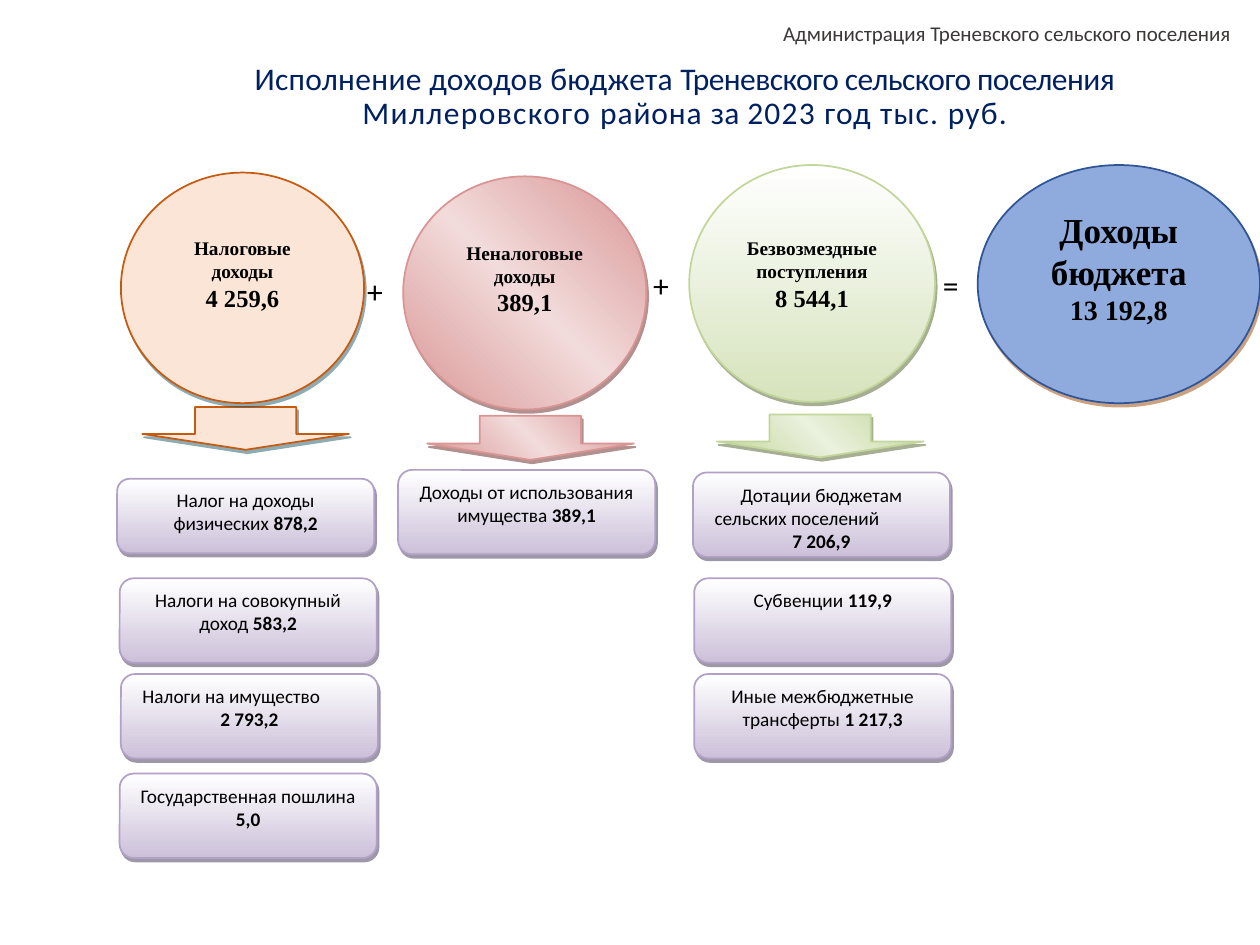
import copy
import pptx
import pptx.util
import pptx.dml.color
import pptx.enum.shapes
import pptx.enum.text
import pptx.oxml
import pptx.oxml.ns

Pt = pptx.util.Pt
rgb = pptx.dml.color.RGBColor.from_string
qn = pptx.oxml.ns.qn
MSO = pptx.enum.shapes.MSO_SHAPE
ALIGN = pptx.enum.text.PP_ALIGN
ANCHOR = pptx.enum.text.MSO_ANCHOR

prs = pptx.Presentation()
prs.slide_width = pptx.util.Inches(10)
prs.slide_height = pptx.util.Inches(7.5)
s = prs.slides.add_slide(prs.slide_layouts[6])
COL = prs.slide_width / 100
ROW = prs.slide_height / 75


def add(kind, x, y, w, h, colors=None, angle=0, line=None, shadow=None):
    place = [int(x * COL), int(y * ROW), int(w * COL), int(h * ROW)]
    if kind is None:
        sp = s.shapes.add_textbox(*place)
    else:
        sp = s.shapes.add_shape(kind, *place)
        sp.shadow.inherit = False
        if len(colors) == 1:
            sp.fill.solid()
            sp.fill.fore_color.rgb = rgb(colors[0])
        else:
            sp.fill.gradient()
            sp.fill.gradient_angle = angle
            stops = sp._element.spPr.find(".//" + qn("a:gsLst"))
            while len(stops) < len(colors):
                stops.append(copy.deepcopy(stops[0]))
            for i, (stop, color) in enumerate(zip(sp.fill.gradient_stops, colors)):
                stop.position = i / (len(colors) - 1)
                stop.color.rgb = rgb(color)
        sp.line.color.rgb = rgb(line)
        sp.line.width = Pt(1)
        effects = sp._element.spPr.find(qn("a:effectLst"))
        effects.append(pptx.oxml.parse_xml(
            f'<a:outerShdw {pptx.oxml.ns.nsdecls("a")} dist="{Pt(2.2)}" dir="3780000" algn="ctr" rotWithShape="0">'
            f'<a:srgbClr val="{shadow}"><a:alpha val="50000"/></a:srgbClr></a:outerShdw>'))
    sp.text_frame.word_wrap = True
    sp.text_frame.vertical_anchor = ANCHOR.TOP
    return sp


def write(tf, runs, size, font="Calibri", color="000000", bold=None, align=ALIGN.CENTER):
    p = tf.paragraphs[0]
    if p.runs:
        p = tf.add_paragraph()
    p.alignment = align
    p.font.size = Pt(size)
    p.font.name = font
    p.font.color.rgb = rgb(color)
    p.font.bold = bold
    for text in runs:
        r = p.add_run()
        r.text = text
    return p


tf = add(None, 8.7, 4.5, 91.3, 11.6).text_frame
p = write(tf, ["Исполнение доходов бюджета", " Треневского сельского поселения"], 18, color="002060")
p.line_spacing = 0.9
p.add_line_break()
for text in ["Миллеровского ", "района ", "за ", "2023 год тыс. руб."]:
    r = p.add_run()
    r.text = text
for r, spacing in zip(p.runs, [20, -30, 80, 50, 20, 70]):
    r.font._element.set("spc", str(spacing))

tf = add(None, 35.4, 1.4, 63.3, 2.4).text_frame
tf.vertical_anchor = ANCHOR.MIDDLE
write(tf, ["Администрация Треневского сельского поселения"], 12, color="3B3838", align=ALIGN.RIGHT)

PEACH = (["FBE5D6"], 0, "C55A11", "205867")
PINK = (["D99594", "F2DBDB", "D99594"], 45, "D99594", "622423")
GREEN = (["C2D69B", "EAF1DD", "C2D69B"], 45, "C2D69B", "4E6128")
PALE_GREEN = (["FFFFFF", "D6E3BC"], 270, "C2D69B", "4E6128")
BLUE = (["8FAADC"], 0, "2F5597", "974706")
LILAC = (["FFFFFF", "CCC0D9"], 270, "B2A1C7", "3F3151")

for x, y, h, look in [(11.3, 32.3, 3.4, PEACH), (56.9, 32.9, 3.4, GREEN), (33.9, 33, 3.5, PINK)]:
    sp = add(MSO.DOWN_ARROW, x, y, 16.4, h, *look)
    sp.adjustments[0] = 0.49
    sp.adjustments[1] = 0.37

for x, y, sign in [(27.7, 21.1, "+"), (50.4, 20.6, "+"), (73.4, 20.6, "=")]:
    write(add(None, x, y, 4.1, 4).text_frame, [sign], 18)

circles = [
    (9.6, 13.7, 19.3, 18.3, PEACH, 2.4, "Налоговые доходы", 11, "4 259,6", 14),
    (32, 14, 19.3, 18.5, PINK, 2.4, "Неналоговые доходы", 11, "389,1", 14),
    (54.7, 13.1, 19.5, 18.8, PALE_GREEN, 2.9, "Безвозмездные поступления", 11, "8 544,1", 14),
    (77.6, 13.1, 22.4, 18.9, BLUE, 0.7, "Доходы бюджета", 20, "13 192,8", 16),
]
for x, y, w, h, look, inset, name, name_size, value, value_size in circles:
    tf = add(MSO.FLOWCHART_CONNECTOR, x, y, w, h, *look).text_frame
    tf.margin_top = int(inset * ROW)
    for text, size in [(name, name_size), (value, value_size)]:
        p = write(tf, [text], size, "Times New Roman", bold=True)
    p.space_after = Pt(10)

cards = [
    (9.3, 38, 5.9, [], ["Налог на доходы физических ", "878,2"]),
    (9.5, 45.9, 6.7, [], ["Налоги на совокупный доход ", "583,2"]),
    (9.6, 53.5, 6.7, [("Налоги на имущество", ALIGN.LEFT)], ["2 793,2"]),
    (9.5, 61.4, 6.7, [], ["Государственная пошлина ", "5,0"]),
    (31.6, 37.3, 6.7, [], ["Доходы от использования имущества ", "389,1"]),
    (55, 37.5, 6.7, [("Дотации бюджетам", ALIGN.CENTER), ("сельских поселений", ALIGN.LEFT)], ["7 206,9"]),
    (55.1, 45.9, 6.7, [], ["Субвенции ", "119,9"]),
    (55.1, 53.5, 6.7, [], ["Иные межбюджетные трансферты ", "1 217,3"]),
]
for x, y, h, lines, last in cards:
    tf = add(MSO.FLOWCHART_ALTERNATE_PROCESS, x, y, 20.4, h, *LILAC).text_frame
    for text, align in lines:
        p = write(tf, [text], 11, align=align)
        if align == ALIGN.LEFT:
            p._p.get_or_add_pPr().set("marL", str(int(0.4 * COL)))
    write(tf, last, 11).runs[-1].font.bold = True

prs.save("out.pptx")
